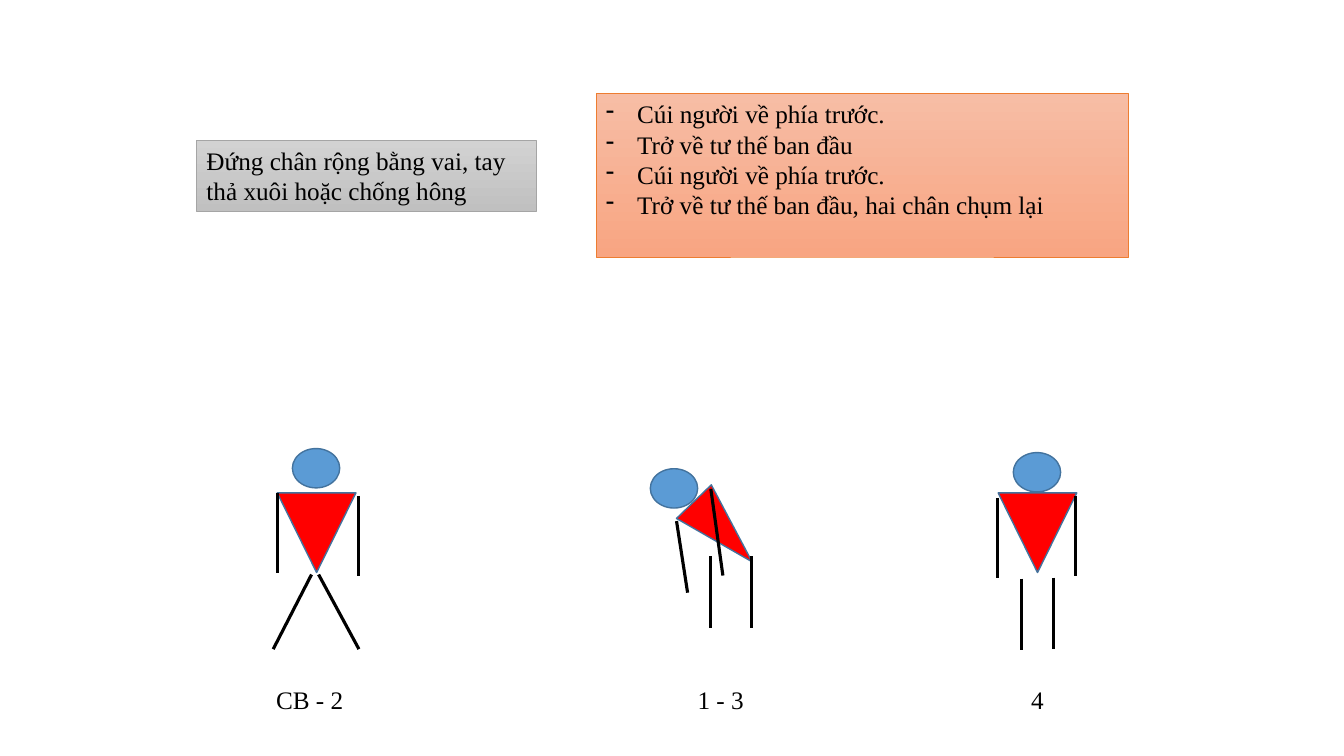
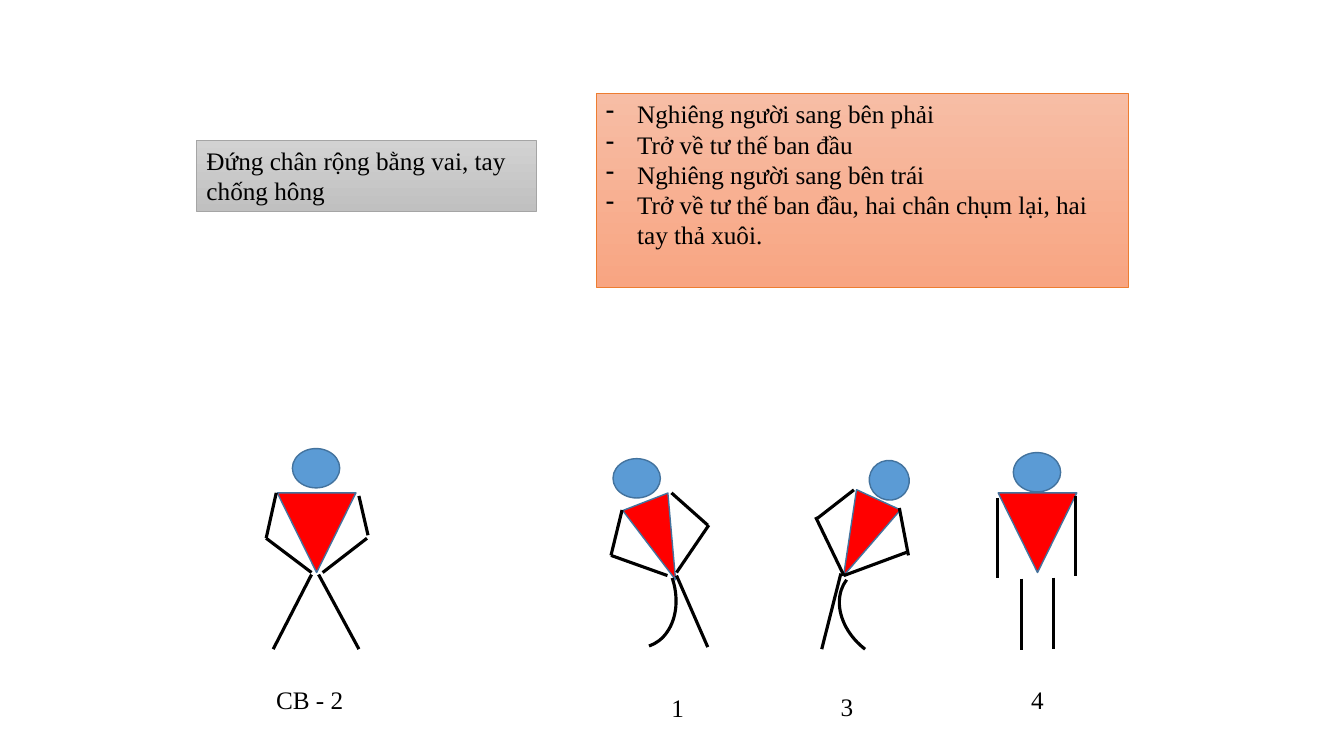
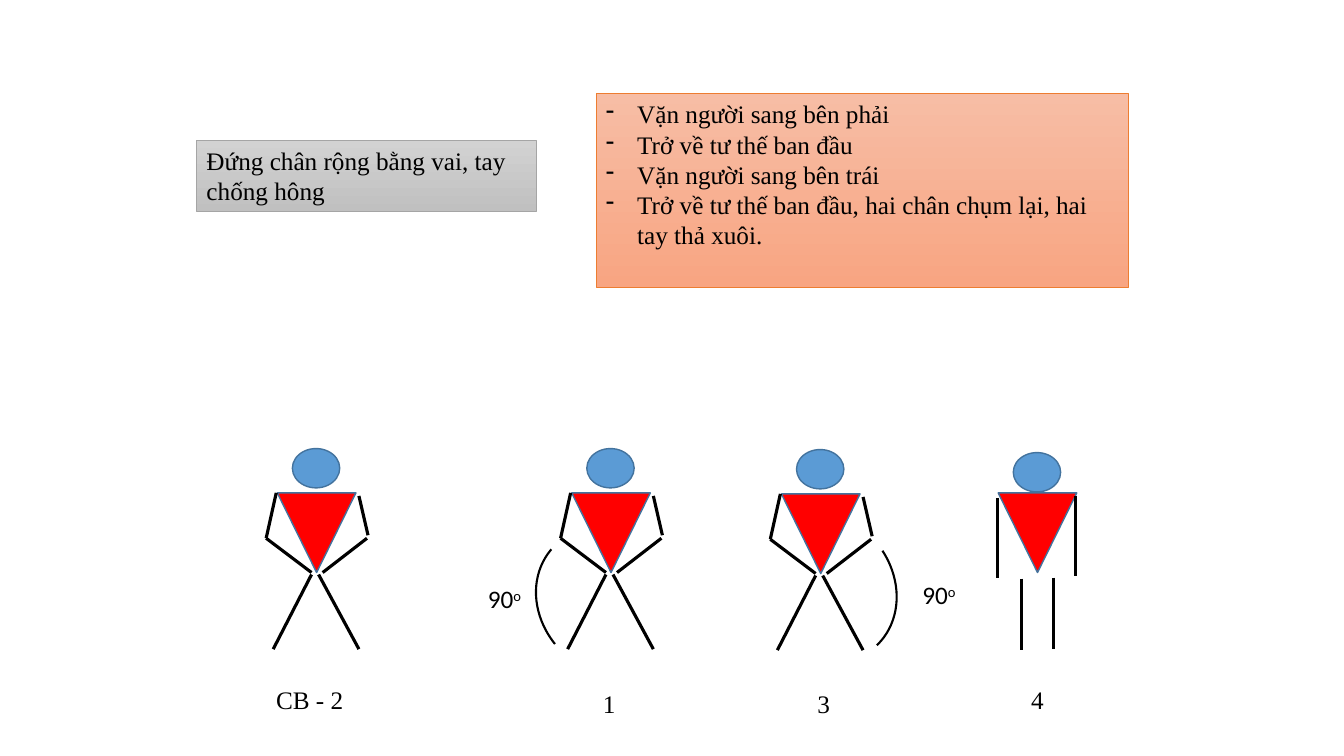
"""Build three slides of stick-figure exercise instructions."""
from lxml.etree import SubElement
from pptx import Presentation
from pptx.dml.color import RGBColor
from pptx.enum.shapes import MSO_CONNECTOR as Connector, MSO_SHAPE as Shape
from pptx.enum.text import MSO_ANCHOR as Anchor, MSO_AUTO_SIZE as AutoSize, PP_ALIGN as Align
from pptx.oxml.ns import qn
from pptx.util import Inches, Pt

COLORS = {
    "black": "000000", "head": "5B9BD5", "torso": "FF0000", "outline": "43739E",
    "start_top": "D2D2D2", "start_bottom": "C0C0C0", "start_line": "A5A5A5",
    "steps_top": "F7BDA5", "steps_bottom": "F8A582", "steps_line": "ED7D31",
}
FONT = "Times New Roman"
HEAD_SIZE = (0.47, 0.39)
UPRIGHT = (0.78, 0.79, 180)
LIMB_WIDTH = 2.25
START_BOX = (1.95, 1.39, 3.37, 0.71)
STEPS_LEFT, STEPS_TOP, STEPS_WIDTH = 5.91, 0.93, 5.28
BULLET_INDENT = 0.31
DEGREE_ARC = (1.69, 1.46)
DEGREE_ADJUSTMENTS = (174.964, 2.369)

WIDE_LEGS = [(0.34, 0.81, -0.04, 1.55), (0.41, 0.81, 0.81, 1.55)]

POSES = {
    "arms_down": {
        "torso": UPRIGHT, "head": (0.15, -0.44),
        "limbs": [(0, 0, 0, 0.79), (0.81, 0.03, 0.81, 0.82)] + WIDE_LEGS,
    },
    "hands_on_hips": {
        "torso": UPRIGHT, "head": (0.15, -0.44),
        "limbs": [(-0.01, 0, -0.11, 0.45), (-0.11, 0.45, 0.34, 0.79),
                  (0.81, 0.03, 0.9, 0.42), (0.89, 0.45, 0.45, 0.79)] + WIDE_LEGS,
    },
    "feet_together": {
        "torso": UPRIGHT, "head": (0.15, -0.4),
        "limbs": [(-0.01, 0.05, -0.01, 0.84), (0.77, 0.03, 0.77, 0.82),
                  (0.23, 0.85, 0.23, 1.56), (0.55, 0.84, 0.55, 1.55)],
    },
    "bend_forward": {
        "torso": (0.48, 0.83, 136), "head": (-0.48, -0.21),
        "limbs": [(-0.22, 0.31, -0.11, 1.02), (0.12, -0.01, 0.24, 0.85),
                  (0.12, 0.66, 0.12, 1.37), (0.52, 0.66, 0.52, 1.37)],
    },
    "lean_right": {
        "torso": (0.48, 0.83, 158.8), "head": (-0.23, -0.4),
        "limbs": [(-0.14, 0.11, -0.25, 0.56), (-0.25, 0.56, 0.31, 0.76),
                  (0.35, -0.06, 0.71, 0.26), (0.72, 0.26, 0.4, 0.73),
                  (0.4, 0.76, 0.71, 1.47)],
        "curved_leg": (-0.62, 0.49, 1.13, 0.87, 71.2),
    },
    "lean_left": {
        "torso": (0.48, 0.83, 204.7), "head": (0.32, -0.35),
        "head_size": (0.4, 0.39), "head_turn": 38.4,
        "limbs": [(0.17, -0.06, -0.19, 0.22), (-0.21, 0.21, 0.07, 0.79),
                  (0.62, 0.12, 0.71, 0.59), (0.69, 0.56, 0.07, 0.79),
                  (0.04, 0.77, -0.15, 1.52)],
        "curved_leg": (-0.02, 0.74, 1.13, 0.87, 217.5),
    },
}

RETURN = "Trở về tư thế ban đầu"
RETURN_ARMS_DOWN = RETURN + ", hai chân chụm lại, hai tay thả xuôi."
HIPS_START = "Đứng chân rộng bằng vai, tay chống hông"
FIRST_LABEL = ("CB - 2", 2.64, 6.74, 1.1)
LAST_LABEL = ("4", 10.13, 6.74, 0.54)
LAST_FIGURE = ("feet_together", 9.9, 4.89)
HIPS_FIGURE = ("hands_on_hips", 2.75, 4.89)

EXERCISES = [
    {
        "start": "Đứng chân rộng bằng vai, tay thả xuôi hoặc chống hông",
        "steps": ["Cúi người về phía trước.", RETURN,
                  "Cúi người về phía trước.", RETURN + ", hai chân chụm lại"],
        "steps_height": 1.62,
        "figures": [("arms_down", 2.75, 4.89), ("bend_forward", 6.93, 4.86), LAST_FIGURE],
        "labels": [FIRST_LABEL, ("1 - 3", 6.82, 6.74, 1.1), LAST_LABEL],
    },
    {
        "start": HIPS_START,
        "steps": ["Nghiêng người sang bên phải", RETURN,
                  "Nghiêng người sang bên trái", RETURN_ARMS_DOWN],
        "steps_height": 1.92,
        "figures": [HIPS_FIGURE, ("lean_right", 6.31, 4.95),
                    ("lean_left", 8.3, 4.92), LAST_FIGURE],
        "labels": [FIRST_LABEL, ("1", 6.56, 6.82, 0.86), ("3", 8.24, 6.81, 0.81), LAST_LABEL],
    },
    {
        "start": HIPS_START,
        "steps": ["Vặn người sang bên phải", RETURN,
                  "Vặn người sang bên trái", RETURN_ARMS_DOWN],
        "steps_height": 1.92,
        "figures": [HIPS_FIGURE, ("hands_on_hips", 5.67, 4.89),
                    ("hands_on_hips", 7.75, 4.9), LAST_FIGURE],
        "labels": [FIRST_LABEL, ("1", 5.88, 6.78, 0.48), ("3", 8.01, 6.78, 0.56), LAST_LABEL],
        "turns": [(5.28, 5.25, 215), (7.25, 5.08, 40.6)],
        "degrees": [(4.74, 5.74), (9.05, 5.7)],
    },
]


def color(name):
    return RGBColor.from_string(COLORS[name])


def write_text(shape, lines, font=FONT, size=18, bullet=None, superscript=None):
    frame = shape.text_frame
    frame.word_wrap = True
    frame.auto_size = AutoSize.NONE
    frame.vertical_anchor = Anchor.TOP
    for index, line in enumerate(lines):
        paragraph = frame.add_paragraph() if index else frame.paragraphs[0]
        paragraph.alignment = Align.LEFT
        paragraph.space_before = Pt(0)
        for text in filter(None, (line, superscript)):
            run = paragraph.add_run()
            run.text = text
            run.font.name = font
            run.font.size = Pt(size)
            run.font.color.rgb = color("black")
        if superscript:
            run.font._element.set("baseline", "30000")
        if bullet:
            properties = paragraph._p.get_or_add_pPr()
            properties.set("marL", str(Inches(BULLET_INDENT)))
            properties.set("indent", str(-Inches(BULLET_INDENT)))
            SubElement(properties, qn("a:buFontTx"))
            SubElement(properties, qn("a:buChar")).set("char", bullet)


def add_label(slide, text, left, top, width, **text_format):
    box = slide.shapes.add_textbox(*map(Inches, (left, top, width, 0.4)))
    write_text(box, [text], **text_format)


def style_box(shape, role):
    shape.fill.gradient()
    shape.fill.gradient_angle = 270
    for stop, end in zip(shape.fill.gradient_stops, ("top", "bottom")):
        stop.color.rgb = color(f"{role}_{end}")
    shape.line.color.rgb = color(f"{role}_line")
    shape.line.width = Pt(0.5)


def add_preset(slide, kind, box, fill=None, line="outline", width=1, rotation=0):
    shape = slide.shapes.add_shape(kind, *map(Inches, box))
    shape.shadow.inherit = False
    shape.rotation = rotation
    if fill:
        shape.fill.solid()
        shape.fill.fore_color.rgb = color(fill)
    else:
        shape.fill.background()
    shape.line.color.rgb = color(line)
    shape.line.width = Pt(width)
    return shape


def add_limb(slide, ends):
    limb = slide.shapes.add_connector(Connector.STRAIGHT, *map(Inches, ends))
    limb.line.color.rgb = color("black")
    limb.line.width = Pt(LIMB_WIDTH)
    SubElement(limb._element.spPr, qn("a:effectLst"))


def add_figure(slide, pose_name, left, top):
    pose = POSES[pose_name]
    width, height, rotation = pose["torso"]
    add_preset(slide, Shape.ISOSCELES_TRIANGLE, (left, top, width, height),
               fill="torso", rotation=rotation)
    for x1, y1, x2, y2 in pose["limbs"]:
        add_limb(slide, (left + x1, top + y1, left + x2, top + y2))
    if "curved_leg" in pose:
        x, y, width, height, rotation = pose["curved_leg"]
        add_preset(slide, Shape.ARC, (left + x, top + y, width, height),
                   line="black", width=LIMB_WIDTH, rotation=rotation)
    x, y = pose["head"]
    add_preset(slide, Shape.OVAL, (left + x, top + y, *pose.get("head_size", HEAD_SIZE)),
               fill="head", rotation=pose.get("head_turn", 0))


def add_steps(slide, steps, height):
    body = slide.placeholders[1]
    body.left, body.top = Inches(STEPS_LEFT), Inches(STEPS_TOP)
    body.width, body.height = Inches(STEPS_WIDTH), Inches(height)
    style_box(body, "steps")
    write_text(body, steps, bullet="-")


def add_exercise(presentation, exercise):
    slide = presentation.slides.add_slide(presentation.slide_layouts[1])
    title = slide.shapes.title._element
    title.getparent().remove(title)
    start = add_preset(slide, Shape.RECTANGLE, START_BOX)
    style_box(start, "start")
    write_text(start, [exercise["start"]])
    add_steps(slide, exercise["steps"], exercise["steps_height"])
    for figure in exercise["figures"]:
        add_figure(slide, *figure)
    for label in exercise["labels"]:
        add_label(slide, *label)
    for left, top, rotation in exercise.get("turns", []):
        arc = add_preset(slide, Shape.ARC, (left, top, *DEGREE_ARC),
                         line="black", width=1.5, rotation=rotation)
        for index, value in enumerate(DEGREE_ADJUSTMENTS):
            arc.adjustments[index] = value
    for left, top in exercise.get("degrees", []):
        add_label(slide, "90", left, top, 0.55, font="Calibri", superscript="o")


def main():
    presentation = Presentation()
    presentation.slide_width, presentation.slide_height = Inches(13.33), Inches(7.5)
    for exercise in EXERCISES:
        add_exercise(presentation, exercise)
    presentation.save("out.pptx")


if __name__ == "__main__":
    main()
